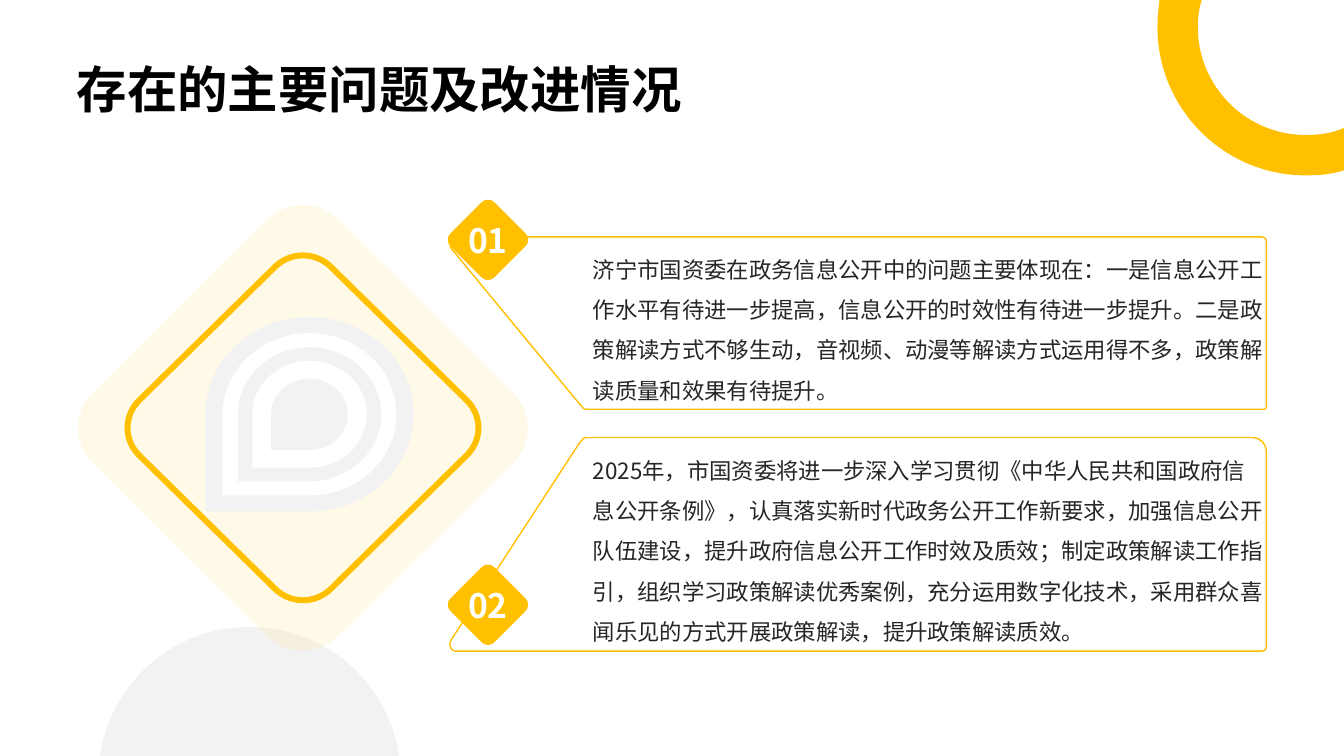
from lxml import etree
from pptx import Presentation
from pptx import util as u
from pptx.dml.color import RGBColor
from pptx.enum import shapes, text
from pptx.oxml.ns import qn

FONT = "Noto Sans CJK SC"
GOLD, CREAM, GREY, WHITE = "FFC000", "FFECB2", "F2F2F2", "FFFFFF"
TITLE = "存在的主要问题及改进情况"
PROBLEMS = (
    "济宁市国资委在政务信息公开中的问题主要体现在：一是信息公开工作水平有待进一步提高，"
    "信息公开的时效性有待进一步提升。二是政策解读方式不够生动，音视频、动漫等解读方式运用得不多，"
    "政策解读质量和效果有待提升。"
)
IMPROVEMENTS = (
    "2025年，市国资委将进一步深入学习贯彻《中华人民共和国政府信息公开条例》，"
    "认真落实新时代政务公开工作新要求，加强信息公开队伍建设，提升政府信息公开工作时效及质效；"
    "制定政策解读工作指引，组织学习政策解读优秀案例，充分运用数字化技术，"
    "采用群众喜闻乐见的方式开展政策解读，提升政策解读质效。"
)


def color(value):
    """Turn a hex string into a colour."""
    return RGBColor.from_string(value)


def paint(shape, fill=None, line=None, width=1, opacity=None):
    """Set fill, line and opacity, and drop the shadow."""
    shape.shadow.inherit = False
    if fill:
        shape.fill.solid()
        shape.fill.fore_color.rgb = color(fill)
    else:
        shape.fill.background()
    if line:
        shape.line.color.rgb = color(line)
        shape.line.width = u.Pt(width)
    else:
        shape.line.fill.background()
    if opacity:
        tint = shape.fill._xPr.find(qn("a:solidFill"))[0]
        etree.SubElement(tint, qn("a:alpha"), val=str(opacity * 1000))


def write(shape, words, size, value, bold=False, align=text.PP_ALIGN.LEFT,
          anchor=text.MSO_ANCHOR.MIDDLE, left=0, spacing=None):
    """Fill a shape with one formatted paragraph."""
    frame = shape.text_frame
    frame.text = words
    frame.word_wrap = True
    frame.auto_size = text.MSO_AUTO_SIZE.NONE
    frame.vertical_anchor = anchor
    frame.margin_left = u.Inches(left)
    frame.margin_top = frame.margin_right = frame.margin_bottom = 0
    paragraph = frame.paragraphs[0]
    paragraph.alignment = align
    paragraph.line_spacing = spacing
    font = paragraph.runs[0].font
    font.name, font.size, font.bold = FONT, u.Pt(size), bold
    font.color.rgb = color(value)
    etree.SubElement(font._element, qn("a:ea"), typeface=FONT)


def add_outline(slide, left, top, width, height, segments):
    """Draw a closed outline of lines (one point) and curves (three points) in a box."""
    builder = slide.shapes.build_freeform(u.Inches(left), u.Inches(top), scale=1)
    right, bottom = u.Inches(left + width), u.Inches(top + height)
    builder.add_line_segments([(right, u.Inches(top)), (right, bottom)])
    shape = builder.convert_to_shape()
    outline = next(shape._element.iter(qn("a:path")))
    for child in list(outline):
        outline.remove(child)
    for i, points in enumerate(segments):
        kind = "a:moveTo" if i == 0 else "a:lnTo" if len(points) == 1 else "a:cubicBezTo"
        segment = etree.SubElement(outline, qn(kind))
        for x, y in points:
            etree.SubElement(segment, qn("a:pt"), x=str(u.Inches(x)), y=str(u.Inches(y)))
    etree.SubElement(outline, qn("a:close"))
    return shape


def add_diamond(slide, left, top, width, height):
    """Draw a diamond with rounded corners inside a box."""
    corner = [(0.93, -0.16), (1.02, -0.07), (1.02, 0.07), (0.93, 0.16)]
    segments = []
    for _ in range(4):
        places = [(width / 2 * (1 + x), height / 2 * (1 + y)) for x, y in corner]
        segments += [places[:1], places[1:]]
        corner = [(-y, x) for x, y in corner]
    return add_outline(slide, left, top, width, height, segments)


def add_ring(slide, left, top, width, height):
    """Draw the ring cut by the top right corner."""
    ring = add_outline(slide, left, top, width, height, [
        [(0.44, 0)],
        [(0.41, 0.09), (0.4, 0.18), (0.4, 0.27)],
        [(0.4, 0.86), (0.88, 1.34), (1.47, 1.34)],
        [(1.61, 1.34), (1.74, 1.32), (width, 1.27)],
        [(width, 1.69)],
        [(1.73, 1.73), (1.6, height), (1.47, height)],
        [(0.66, height), (0, 1.08), (0, 0.27)],
        [(0, 0.18), (0.01, 0.09), (0.02, 0)]])
    paint(ring, GOLD)


def add_dome(slide, left, top, width, height):
    """Draw the circle cut by the bottom edge."""
    middle = width / 2
    dome = add_outline(slide, left, top, width, height, [
        [(width, height)],
        [(0, height)],
        [(0.11, 0.55), (0.73, 0), (middle, 0)],
        [(width - 0.73, 0), (width - 0.11, 0.55), (width, height)]])
    paint(dome, "000000", opacity=5)


def add_title(slide, left, top, width, height):
    """Place and format the title."""
    title = slide.shapes.title
    title.left, title.top = u.Inches(left), u.Inches(top)
    title.width, title.height = u.Inches(width), u.Inches(height)
    write(title, TITLE, 36, "000000", bold=True, anchor=text.MSO_ANCHOR.BOTTOM)


def add_panel(slide, left, top, width, height, words, radius, wide_top):
    """Draw a slanted text panel whose wide edge is at the top or bottom."""
    right = width - 0.01
    segments = [
        [(1.35, height)],
        [(1.33, height), (1.32, height - 0.01), (1.31, height - 0.03)],
        [(1.3, height - 0.03), (1.3, height - 0.05), (1.29, height - 0.05)],
        [(0.02, 0.12)],
        [(-0.02, 0.06), (0.01, 0), (0.06, 0)],
        [(right - 0.04, 0)],
        [(right - 0.01, 0), (right, 0.02), (right, 0.06)],
        [(right, height - radius)],
        [(right, height - radius / 2), (right - radius / 2, height), (right - radius, height)]]
    if not wide_top:
        segments = [[(x, height - y) for x, y in points] for points in segments]
    panel = add_outline(slide, left, top, width, height, segments)
    paint(panel, line=GOLD)
    write(panel, words, 16, "262626", left=1.42, spacing=1.5)


def add_badge(slide, left, top, size, number):
    """Draw a numbered diamond."""
    badge = add_diamond(slide, left, top, size, size)
    paint(badge, GOLD)
    write(badge, number, 24, WHITE, bold=True, align=text.PP_ALIGN.CENTER)


def add_emblem(slide, left, top, width, height):
    """Draw the large diamond with its frame and nested teardrops."""
    paint(add_diamond(slide, left, top, width, height), CREAM, opacity=30)
    frame = add_diamond(slide, left + 0.49, top + 0.5, width - 0.98, height - 1)
    paint(frame, line=GOLD, width=4.25)
    group = slide.shapes.add_group_shape()
    center_x, center_y = left + 2.3, top + 2.08
    for i, drop_width in enumerate((1.93, 1.61, 1.33, 1.06, 0.71)):
        drop_height = drop_width * 1.07
        drop = group.shapes.add_shape(
            shapes.MSO_SHAPE.TEAR,
            u.Inches(center_x - drop_width / 2), u.Inches(center_y - drop_height / 2),
            u.Inches(drop_width), u.Inches(drop_height))
        drop.rotation = 270
        drop._element.spPr.xfrm.set("flipH", "1")
        paint(drop, WHITE if i % 2 else GREY)


def main():
    """Build and save the slide."""
    presentation = Presentation()
    presentation.slide_width, presentation.slide_height = u.Inches(13.33), u.Inches(7.5)
    slide = presentation.slides.add_slide(presentation.slide_layouts[5])
    add_ring(slide, 11.48, 0, 1.85, 1.74)
    add_dome(slide, 0.99, 6.22, 2.97, 1.28)
    add_panel(slide, 4.46, 2.35, 8.11, 1.71, PROBLEMS, radius=0.02, wide_top=True)
    add_panel(slide, 4.46, 4.34, 8.11, 2.12, IMPROVEMENTS, radius=0.13, wide_top=False)
    add_badge(slide, 4.44, 1.98, 0.8, "01")
    add_badge(slide, 4.44, 5.6, 0.8, "02")
    add_title(slide, 0.76, 0.39, 11.81, 0.79)
    add_emblem(slide, 0.77, 2.03, 4.47, 4.43)
    presentation.save("out.pptx")


if __name__ == "__main__":
    main()
